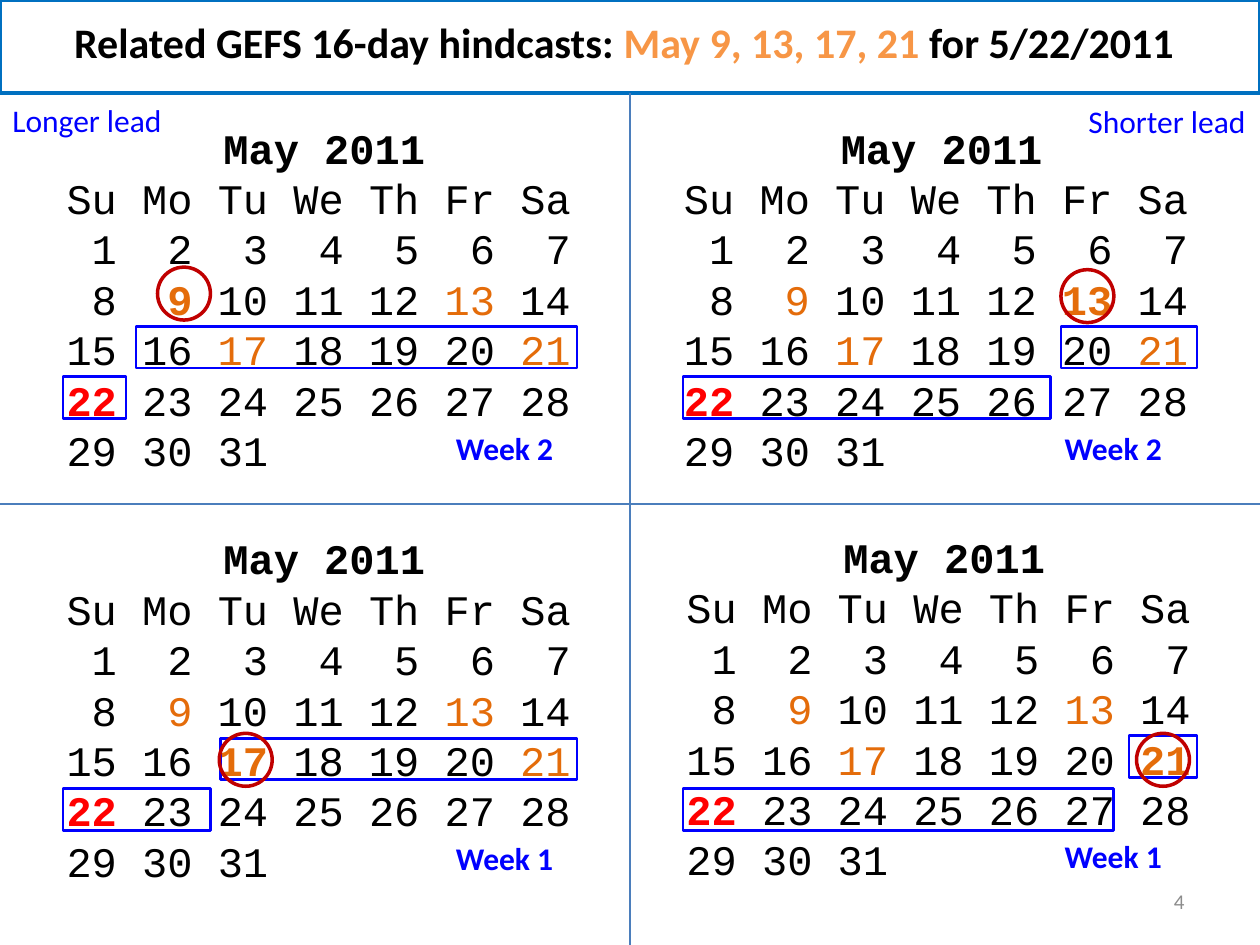
"""Build the slide of GEFS hindcast calendars for 22 May 2011."""
from dataclasses import dataclass
from itertools import groupby
from typing import NamedTuple

from pptx import Presentation
from pptx.dml.color import RGBColor
from pptx.enum.shapes import MSO_CONNECTOR as Conn, MSO_SHAPE as Shape
from pptx.enum.text import MSO_ANCHOR as Anchor, MSO_AUTO_SIZE as Fit, PP_ALIGN as Align
from pptx.oxml.ns import qn
from pptx.util import Inches, Pt


@dataclass(frozen=True)
class Theme:
    sans: str = "Calibri"
    mono: str = "Courier New"
    large: int = 24
    medium: int = 18
    small: int = 12
    ink: str = "000000"
    blue: str = "0000FF"
    run_day: str = "E46C0A"
    target_day: str = "FF0000"
    ring: str = "C00000"
    frame: str = "0070C0"
    divider: str = "4B7EBC"
    accent: str = "F79646"
    muted: str = "8C8C8C"


class Run(NamedTuple):
    text: str
    color: str = Theme.ink
    bold: bool = False
    size: int = Theme.large
    font: str = Theme.mono


class Box(NamedTuple):
    left: float
    top: float
    width: float
    height: float


@dataclass(frozen=True)
class Calendar:
    left: float
    top: float
    start_day: int
    ring: tuple[float, float]
    spans: tuple[tuple[float, float, float], ...]
    week: str
    week_at: tuple[float, float]


T = Theme()
RUN_DAYS = (9, 13, 17, 21)
TARGET_DAY = 22
LAST_DAY = 31
SPAN_HEIGHT = 0.33
RING_SIZE = 0.42

CALENDARS = (
    Calendar(0.43, 0.92, 9, (1.25, 2.12),
             ((1.08, 2.59, 3.5), (0.5, 2.99, 0.5)), "Week 2", (3.52, 3.36)),
    Calendar(5.33, 0.92, 13, (8.42, 2.14),
             ((8.42, 2.59, 1.08), (5.42, 2.99, 2.92)), "Week 2", (8.35, 3.36)),
    Calendar(0.43, 4.18, 17, (1.74, 5.82),
             ((1.75, 5.86, 2.83), (0.5, 6.26, 1.17)), "Week 1", (3.52, 6.61)),
    Calendar(5.35, 4.17, 21, (9.02, 5.82),
             ((8.96, 5.84, 0.54), (5.42, 6.26, 3.42)), "Week 1", (8.35, 6.59)),
)


def add_runs(p, runs: list[Run]) -> None:
    """Append formatted runs to a paragraph."""
    for run in runs:
        r = p.add_run()
        r.text = run.text
        r.font.name = run.font
        r.font.size = Pt(run.size)
        r.font.bold = run.bold
        r.font.color.rgb = RGBColor.from_string(run.color)


def add_text(s, box: Box, lines: list[list[Run]], *, align=Align.LEFT,
             first_align=None, anchor=Anchor.TOP, wrap: bool = False):
    """Add a text box with one paragraph for each list of runs."""
    sp = s.shapes.add_textbox(*map(Inches, box))
    tf = sp.text_frame
    tf.word_wrap = wrap
    tf.auto_size = Fit.NONE if wrap else Fit.SHAPE_TO_FIT_TEXT
    tf.vertical_anchor = anchor
    for i, runs in enumerate(lines):
        p = tf.paragraphs[0] if i == 0 else tf.add_paragraph()
        p.alignment = first_align if i == 0 and first_align else align
        add_runs(p, runs)
    return sp


def add_outline(s, kind, box: Box, color: str, width: float):
    """Add an unfilled shape with a coloured outline."""
    sp = s.shapes.add_shape(kind, *map(Inches, box))
    sp.shadow.inherit = False
    sp.fill.background()
    sp.line.color.rgb = RGBColor.from_string(color)
    sp.line.width = Pt(width)
    return sp


def add_divider(s, start: tuple[float, float], end: tuple[float, float]):
    """Add a straight dividing line."""
    line = s.shapes.add_connector(Conn.STRAIGHT, *map(Inches, start + end))
    line.line.color.rgb = RGBColor.from_string(T.divider)
    line.line.width = Pt(1.5)
    sp_pr = line._element.spPr
    sp_pr.append(sp_pr.makeelement(qn("a:effectLst"), {}))
    return line


def week_runs(first: int, start_day: int) -> list[Run]:
    """Return the runs of one calendar week, joining neighbours of one style."""
    pieces = []
    for day in range(first, min(first + 7, LAST_DAY + 1)):
        gap = " " * ((day > first) + (day < 10))
        color = (T.run_day if day in RUN_DAYS
                 else T.target_day if day == TARGET_DAY else T.ink)
        pieces += [Run(gap), Run(str(day), color, day in (start_day, TARGET_DAY))]
    grouped = groupby((piece for piece in pieces if piece.text), lambda piece: piece[1:])
    return [Run("".join(piece.text for piece in group), *style) for style, group in grouped]


def add_month(s, cal: Calendar) -> None:
    """Add the month text of a calendar."""
    heading = [Run(" ", size=T.medium, font=T.sans), Run("May 2011", bold=True)]
    weeks = [week_runs(first, cal.start_day) for first in range(1, LAST_DAY + 1, 7)]
    add_text(s, Box(cal.left, cal.top, 4.23, 2.93),
             [heading, [Run("Su Mo Tu We Th Fr Sa")], *weeks], first_align=Align.CENTER)


def add_marks(s, cal: Calendar) -> None:
    """Add the forecast spans, start-day ring and week label of a calendar."""
    for left, top, width in cal.spans:
        add_outline(s, Shape.RECTANGLE, Box(left, top, width, SPAN_HEIGHT), T.blue, 1.5)
    add_outline(s, Shape.OVAL, Box(*cal.ring, RING_SIZE, RING_SIZE), T.ring, 2)
    add_text(s, Box(*cal.week_at, 0.98, 0.4),
             [[Run(cal.week, T.blue, True, T.medium, T.sans)]])


def main() -> None:
    """Build and save the slide."""
    prs = Presentation()
    prs.slide_width, prs.slide_height = Inches(10), Inches(7.5)
    s = prs.slides.add_slide(prs.slide_layouts[6])

    for cal in CALENDARS:
        add_month(s, cal)
    for cal in CALENDARS:
        add_marks(s, cal)

    frame = add_outline(s, Shape.RECTANGLE, Box(0, 0, 10, 0.74), T.frame, 2)
    add_divider(s, (5, 0.74), (5, 7.5)).begin_connect(frame, 2)
    add_divider(s, (0, 4), (10, 4))

    title = (("Related GEFS 16-day hindcasts: ", T.ink),
             ("May 9, 13, 17, 21 ", T.accent), ("for 5/22/2011", T.ink))
    add_text(s, Box(0.49, 0.08, 9.01, 0.5),
             [[Run(text, color, True, T.large, T.sans) for text, color in title]])
    for text, box in (("Longer lead", Box(0, 0.75, 1.4, 0.4)),
                      ("Shorter lead", Box(8.54, 0.76, 1.46, 0.4))):
        add_text(s, box, [[Run(text, T.blue, False, T.medium, T.sans)]])
    add_text(s, Box(7.17, 6.95, 2.33, 0.4), [[Run("4", T.muted, False, T.small, T.sans)]],
             align=Align.RIGHT, anchor=Anchor.MIDDLE, wrap=True)

    prs.save("out.pptx")


if __name__ == "__main__":
    main()
